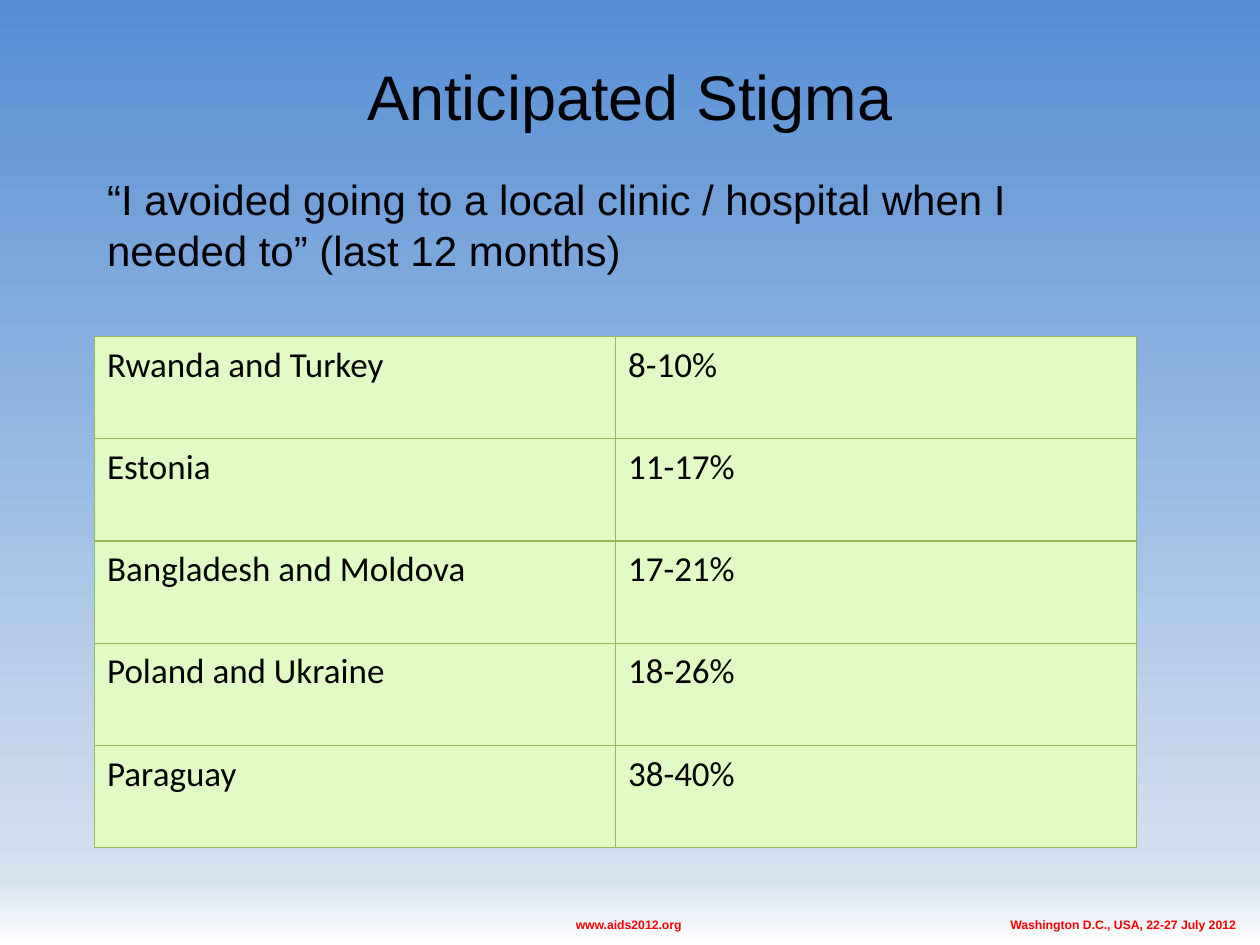
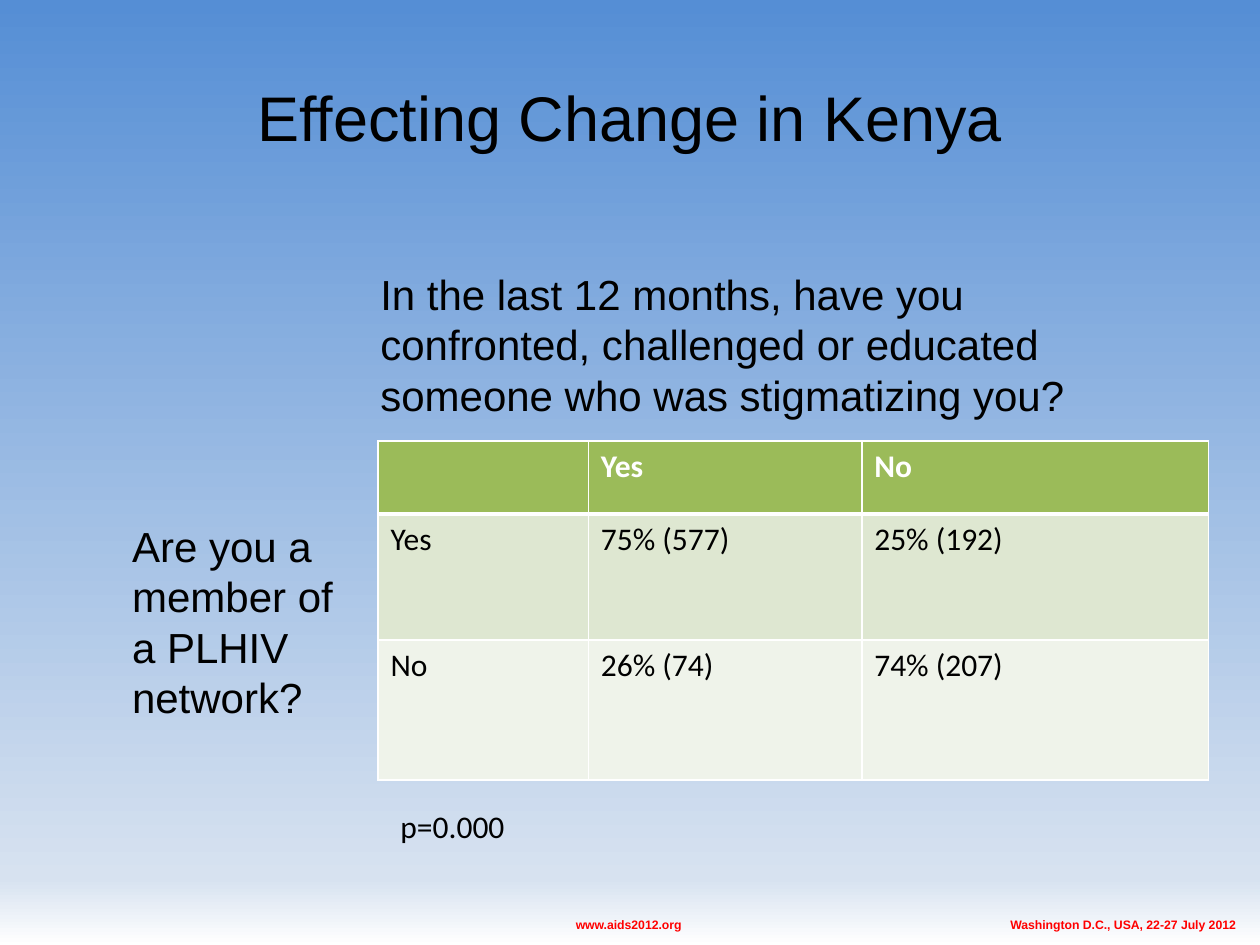
from copy import deepcopy
from dataclasses import dataclass, field

from lxml.etree import SubElement
from pptx import Presentation
from pptx.dml.color import RGBColor
from pptx.enum.text import MSO_ANCHOR, MSO_AUTO_SIZE, PP_ALIGN
from pptx.oxml.ns import qn
from pptx.slide import Slide, SlideMaster
from pptx.table import _Cell
from pptx.text.text import _Paragraph
from pptx.util import Inches, Pt

COLORS = {
    "sky": "558ED5",
    "haze": "D7E2F0",
    "white": "FFFFFF",
    "black": "000000",
    "footer": "FF0000",
    "lime": "E2FAC3",
    "lime_line": "98B955",
    "header": "9BBB59",
    "band_dark": "DEE7D1",
    "band_light": "EFF3EA",
}
BACKGROUND_STOPS = ((0, "sky"), (0.93, "haze"), (1, "white"))
TITLE_ONLY, TITLE_AND_CONTENT = 5, 1


@dataclass(frozen=True)
class Box:
    left: float
    top: float
    width: float
    height: float

    def lengths(self) -> tuple[Inches, ...]:
        return tuple(map(Inches, (self.left, self.top, self.width, self.height)))


@dataclass(frozen=True)
class TextStyle:
    size: float
    font: str = "Arial"
    color: str = "black"
    bold: bool = False
    align: PP_ALIGN = PP_ALIGN.LEFT


@dataclass(frozen=True)
class Label:
    text: str
    box: Box
    style: TextStyle
    wrap: bool = True


@dataclass(frozen=True)
class TableDesign:
    box: Box
    column_widths: tuple[float, ...]
    row_heights: tuple[float, ...]
    rows: tuple[tuple[str, ...], ...]
    row_fills: tuple[str, ...]
    line_color: str
    line_width: float
    body_style: TextStyle
    header_style: TextStyle | None = None
    header_rule: float = 0
    margin_top: float = 0.05
    line_spacing: float = 1.0


TITLE_STYLE = TextStyle(36, align=PP_ALIGN.CENTER)
QUESTION_STYLE = TextStyle(24)
RESULT_STYLE = TextStyle(18, "Calibri")
FOOTER_STYLE = TextStyle(7, color="footer", bold=True)
FOOTERS = (
    Label("Washington D.C., USA, 22-27 July 2012", Box(7.92, 7.23, 2.03, 0.22), FOOTER_STYLE, False),
    Label(
        "www.aids2012.org",
        Box(4.46, 7.23, 1.06, 0.22),
        TextStyle(7, color="footer", bold=True, align=PP_ALIGN.CENTER),
        False,
    ),
)

AVOIDANCE_TABLE = TableDesign(
    box=Box(0.75, 2.67, 8.27, 4.06),
    column_widths=(4.135,) * 2,
    row_heights=(4.06 / 5,) * 5,
    rows=(
        ("Rwanda and Turkey", "8-10%"),
        ("Estonia", "11-17%"),
        ("Bangladesh and Moldova", "17-21%"),
        ("Poland and Ukraine", "18-26%"),
        ("Paraguay", "38-40%"),
    ),
    row_fills=("lime",) * 5,
    line_color="lime_line",
    line_width=0.75,
    body_style=TextStyle(20, "Calibri"),
    margin_top=0.07,
    line_spacing=0.93,
)
NETWORK_TABLE = TableDesign(
    box=Box(3, 3.5, 6.58, 2.69),
    column_widths=(1.67, 2.17, 2.75),
    row_heights=(0.58, 1, 1.11),
    rows=(
        ("", "Yes", "No"),
        ("Yes", "75% (577)", "25% (192)"),
        ("No", "26% (74)", "74% (207)"),
    ),
    row_fills=("header", "band_dark", "band_light"),
    line_color="white",
    line_width=1,
    body_style=RESULT_STYLE,
    header_style=TextStyle(18, "Calibri", "white", True),
    header_rule=3,
)
KENYA_LABELS = (
    Label("p=0.000", Box(3.08, 6.36, 1.75, 0.4), RESULT_STYLE),
    Label(
        "In the last 12 months, have you confronted, challenged or educated someone who was stigmatizing you?",
        Box(2.92, 2.08, 6.43, 1.31),
        QUESTION_STYLE,
    ),
    Label("Are you a member of a PLHIV network?", Box(0.95, 4.08, 1.96, 1.72), QUESTION_STYLE),
)


def rgb(name: str) -> RGBColor:
    return RGBColor.from_string(COLORS[name])


def format_paragraph(paragraph: _Paragraph, style: TextStyle) -> None:
    paragraph.alignment = style.align
    font = paragraph.font
    font.name = style.font
    font.size = Pt(style.size)
    font.bold = style.bold
    font.color.rgb = rgb(style.color)


def paint_background(master: SlideMaster) -> None:
    fill = master.background.fill
    fill.gradient()
    fill.gradient_angle = 270
    stop_list = master.element.find(".//" + qn("p:bg")).find(".//" + qn("a:gsLst"))
    stop_list.append(deepcopy(stop_list[-1]))
    for stop, (position, color) in zip(fill.gradient_stops, BACKGROUND_STOPS):
        stop.position = position
        stop.color.rgb = rgb(color)


def add_label(slide: Slide, label: Label) -> None:
    shape = slide.shapes.add_textbox(*label.box.lengths())
    frame = shape.text_frame
    frame.word_wrap = label.wrap
    frame.auto_size = MSO_AUTO_SIZE.SHAPE_TO_FIT_TEXT
    frame.text = label.text
    format_paragraph(frame.paragraphs[0], label.style)


def fill_placeholder(slide: Slide, index: int, label: Label) -> _Paragraph:
    shape = slide.placeholders[index]
    shape.left, shape.top, shape.width, shape.height = label.box.lengths()
    shape.text_frame.text = label.text
    shape.text_frame.vertical_anchor = MSO_ANCHOR.TOP if index else MSO_ANCHOR.MIDDLE
    return shape.text_frame.paragraphs[0]


def add_body(slide: Slide, label: Label) -> None:
    paragraph = fill_placeholder(slide, 1, label)
    properties = paragraph._p.get_or_add_pPr()
    properties.set("marL", "0")
    properties.set("indent", "0")
    SubElement(properties, qn("a:buNone"))
    paragraph.space_before = Pt(0)
    format_paragraph(paragraph, label.style)


def set_borders(cell: _Cell, color: str, widths: dict[str, float]) -> None:
    properties = cell._tc.get_or_add_tcPr()
    for side, width in widths.items():
        line = SubElement(properties, qn(f"a:ln{side}"), w=str(Pt(width)))
        SubElement(SubElement(line, qn("a:solidFill")), qn("a:srgbClr"), val=COLORS[color])


def add_table(slide: Slide, design: TableDesign) -> None:
    frame = slide.shapes.add_table(
        len(design.rows), len(design.column_widths), *design.box.lengths()
    )
    table = frame.table
    for column, width in zip(table.columns, design.column_widths):
        column.width = Inches(width)
    for row_index, texts in enumerate(design.rows):
        row = table.rows[row_index]
        row.height = Inches(design.row_heights[row_index])
        style = design.header_style if row_index == 0 and design.header_style else design.body_style
        widths = dict.fromkeys("LRTB", design.line_width)
        if design.header_rule and row_index < 2:
            widths["T" if row_index else "B"] = design.header_rule
        for cell, text in zip(row.cells, texts):
            set_borders(cell, design.line_color, widths)
            cell.fill.solid()
            cell.fill.fore_color.rgb = rgb(design.row_fills[row_index])
            cell.margin_top = Inches(design.margin_top)
            cell.text = text
            paragraph = cell.text_frame.paragraphs[0]
            paragraph.line_spacing = design.line_spacing
            format_paragraph(paragraph, style)


def add_slide(presentation: Presentation, layout: int, title: str, title_box: Box) -> Slide:
    slide = presentation.slides.add_slide(presentation.slide_layouts[layout])
    paragraph = fill_placeholder(slide, 0, Label(title, title_box, TITLE_STYLE))
    format_paragraph(paragraph, TITLE_STYLE)
    for footer in FOOTERS:
        add_label(slide, footer)
    return slide


def main() -> None:
    presentation = Presentation()
    presentation.slide_width, presentation.slide_height = Inches(10), Inches(7.5)
    paint_background(presentation.slide_master)

    stigma = add_slide(
        presentation, TITLE_AND_CONTENT, "Anticipated Stigma", Box(0.75, 0.17, 8.5, 1.17)
    )
    quote = "“I avoided going to a local clinic / hospital when I needed to” (last 12 months)"
    add_body(stigma, Label(quote, Box(0.75, 1.33, 8.5, 5.24), QUESTION_STYLE))
    add_table(stigma, AVOIDANCE_TABLE)

    kenya = add_slide(
        presentation, TITLE_ONLY, "Effecting Change in Kenya", Box(0.5, 0.3, 9, 1.25)
    )
    add_table(kenya, NETWORK_TABLE)
    for label in KENYA_LABELS:
        add_label(kenya, label)

    presentation.save("out.pptx")


if __name__ == "__main__":
    main()
